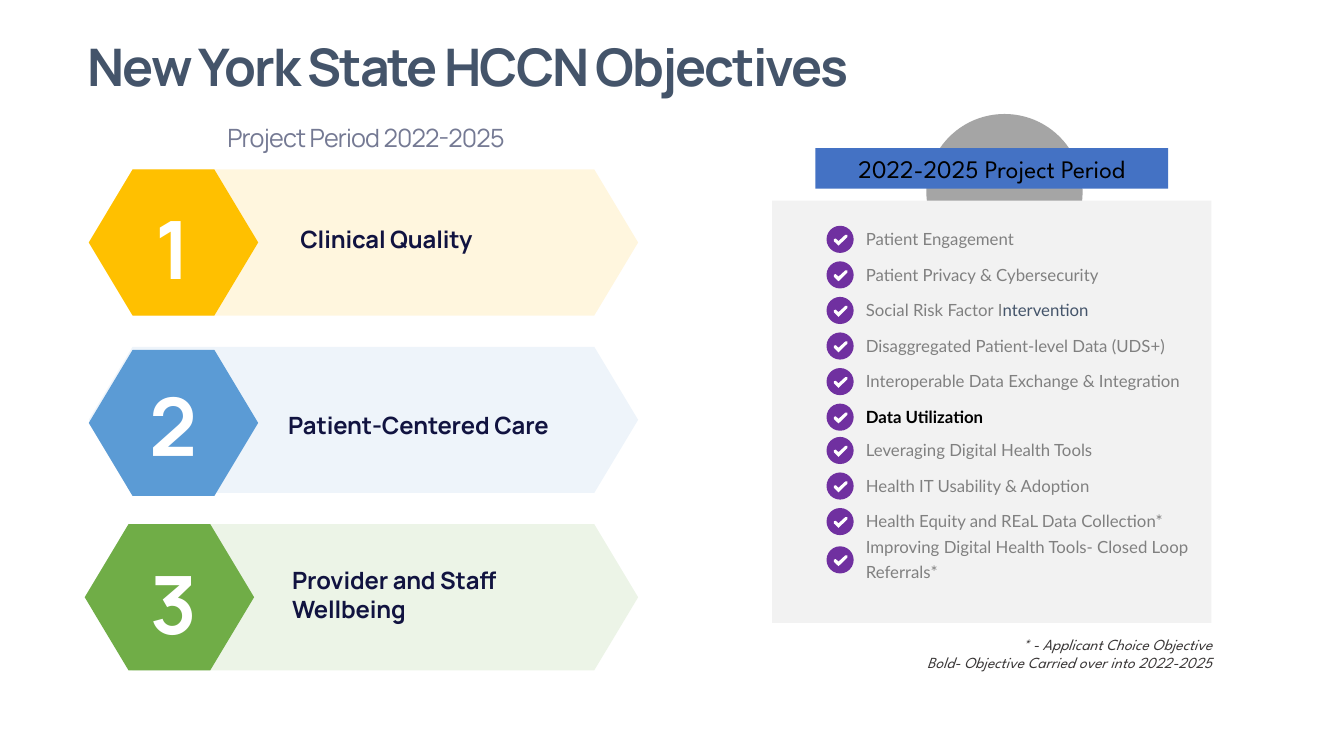
from dataclasses import dataclass, field

from lxml import etree
from pptx import Presentation
from pptx import util as u
from pptx.dml.color import RGBColor
from pptx.enum import shapes, text
from pptx.oxml.ns import qn


@dataclass(frozen=True)
class TextStyle:
    name: str
    size: float
    color: str
    tracking: float = 0
    bold: bool = False
    italic: bool = False


@dataclass(frozen=True)
class Theme:
    title = TextStyle("Manrope", 37, "44546A", -1.4, bold=True)
    subtitle = TextStyle("Manrope", 18, "747993", -0.6)
    number = TextStyle("Manrope", 57.5, "FFFFFF", -1.4, bold=True)
    label = TextStyle("Manrope", 17, "111340", -0.1, bold=True)
    banner = TextStyle("League Spartan", 18, "000000")
    note = TextStyle("League Spartan", 11, "3B3838", italic=True)
    item = TextStyle("Lato", 12, "808080")
    item_accent = TextStyle("Lato", 12, "44546A")
    item_bold = TextStyle("Lato", 12, "000000", bold=True)
    circle: str = "A5A5A5"
    card: str = "F2F2F2"
    banner_fill: str = "4472C4"
    badge: str = "7030A0"
    check: str = "FFFFFF"


@dataclass(frozen=True)
class Goal:
    label: str
    color: str
    opacity: int
    label_box: tuple  # relative to the goal's bar
    token_shift: tuple = field(default=(0, 0))


THEME = Theme()
GOALS = [
    Goal("Clinical Quality", "FFC000", 13, (144, 35.3, 226.8, 28.1)),
    Goal("Patient-Centered Care", "5B9BD5", 10, (135.4, 41.8, 226.8, 28.1), (0, 2.2)),
    Goal("Provider and Staff Wellbeing", "70AD47", 13, (138.2, 25.9, 226.8, 48.2), (-2.9, 0)),
]
# Each objective: space before, number of lines, runs
ROW_GAP, LINE = 7.9, 17.5
OBJECTIVES = [
    (0, 1, [("Patient Engagement", THEME.item)]),
    (ROW_GAP, 1, [("Patient Privacy & Cybersecurity", THEME.item)]),
    (ROW_GAP, 1, [("Social Risk Factor I", THEME.item), ("ntervention", THEME.item_accent)]),
    (ROW_GAP, 1, [("Disaggregated Patient-level Data (UDS+)", THEME.item)]),
    (ROW_GAP, 1, [("Interoperable Data Exchange & Integration", THEME.item)]),
    (ROW_GAP, 1, [("Data Utilization", THEME.item_bold)]),
    (6.3, 1, [("Leveraging Digital Health Tools", THEME.item)]),
    (ROW_GAP, 1, [("Health IT Usability & Adoption", THEME.item)]),
    (ROW_GAP, 1, [("Health Equity and REaL Data Collection*", THEME.item)]),
    (1.1, 2, [("Improving Digital Health Tools- Closed Loop Referrals*", THEME.item)]),
]
CHECK = [(8.6, 14.2), (5.2, 10.9), (5.2, 9.5), (6.6, 9.1), (8.6, 10.9),
         (13.5, 6.4), (14.9, 6.4), (14.9, 8)]


def apply(target, values):
    for name, value in values.items():
        setattr(target, name, value)


def offset(box, left, top, width, height):
    return box[0] + left, box[1] + top, width, height


def points(box):
    return [u.Pt(value) for value in box]


def paint(shape, color, opacity=100):
    shape.shadow.inherit = False
    shape.fill.solid()
    shape.fill.fore_color.rgb = RGBColor.from_string(color)
    shape.line.fill.background()
    if opacity < 100:
        color_node = shape.element.spPr.find(".//" + qn("a:srgbClr"))
        etree.SubElement(color_node, qn("a:alpha")).set("val", str(opacity * 1000))
    return shape


def add_shape(parent, kind, box, color, opacity=100):
    return paint(parent.shapes.add_shape(kind, *points(box)), color, opacity)


def add_run(paragraph, words, style):
    run = paragraph.add_run()
    run.text = words
    apply(run.font, {"name": style.name, "size": u.Pt(style.size),
                     "bold": style.bold, "italic": style.italic})
    run.font.color.rgb = RGBColor.from_string(style.color)
    if style.tracking:
        run.font._element.set("spc", str(round(style.tracking * 100)))


def write(shape, lines, style, alignment=text.PP_ALIGN.LEFT, anchor=text.MSO_ANCHOR.TOP):
    frame = shape.text_frame
    apply(frame, {"word_wrap": True, "auto_size": text.MSO_AUTO_SIZE.NONE,
                  "vertical_anchor": anchor})
    for index, words in enumerate(lines):
        paragraph = frame.add_paragraph() if index else frame.paragraphs[0]
        paragraph.alignment = alignment
        add_run(paragraph, words, style)


def add_text(slide, box, *content, **layout):
    write(slide.shapes.add_textbox(*points(box)), *content, **layout)


def place(shape, box):
    apply(shape, dict(zip(("left", "top", "width", "height"), points(box))))


def add_title(slide, box):
    place(slide.shapes.title, box)
    write(slide.shapes.title, ["New York State HCCN Objectives"], THEME.title)


def add_goals(slide, box):
    # Heading over the three bars
    add_text(slide, offset(box, 31, -36.8, 334, 28.8), ["Project Period 2022-2025"],
             THEME.subtitle, alignment=text.PP_ALIGN.CENTER)
    hexagon = shapes.MSO_SHAPE.HEXAGON
    bar_height = 104.4
    pitch = (box[3] - bar_height) / (len(GOALS) - 1)
    for index, goal in enumerate(GOALS):
        bar = offset(box, 0, index * pitch, box[2], bar_height)
        token = offset(bar, *goal.token_shift, 121, bar_height)
        for outline, opacity in ((bar, goal.opacity), (token, 100)):
            shape = add_shape(slide, hexagon, outline, goal.color, opacity)
            shape.adjustments[0] = 0.3
        add_text(slide, offset(bar, 17.3, 17, 86.4, 77), [str(index + 1)], THEME.number,
                 alignment=text.PP_ALIGN.CENTER, anchor=text.MSO_ANCHOR.MIDDLE)
        add_text(slide, offset(bar, *goal.label_box), [goal.label], THEME.label,
                 anchor=text.MSO_ANCHOR.BOTTOM)


def add_badge(slide, left, top):
    group = slide.shapes.add_group_shape()
    add_shape(group, shapes.MSO_SHAPE.OVAL, (left, top, 19.4, 19.4), THEME.badge)
    outline = [(u.Pt(left + x), u.Pt(top + y)) for x, y in CHECK]
    builder = group.shapes.build_freeform(*outline[0], scale=1.0)
    builder.add_line_segments(outline[1:], close=True)
    paint(builder.convert_to_shape(), THEME.check)


def add_objectives(slide, box):
    # Clipboard: clip, card and banner
    add_shape(slide, shapes.MSO_SHAPE.OVAL, offset(box, 110.2, -61.9, 111.6, 111.6), THEME.circle)
    card = add_shape(slide, shapes.MSO_SHAPE.RECTANGLE, box, THEME.card)
    banner = add_shape(slide, shapes.MSO_SHAPE.RECTANGLE,
                       offset(box, 31, -37.4, 252, 28.8), THEME.banner_fill)
    write(banner, ["2022-2025 Project Period"], THEME.banner, alignment=text.PP_ALIGN.CENTER)

    # Objective list, in front of the card, with one badge per item
    body = slide.placeholders[1]
    place(body, offset(box, 63.4, 15.5, 257.8, 270))
    card.element.addnext(body.element)
    frame = body.text_frame
    apply(frame, {"word_wrap": True, "auto_size": text.MSO_AUTO_SIZE.NONE,
                  "vertical_anchor": text.MSO_ANCHOR.TOP,
                  "margin_left": u.Pt(3.6), "margin_right": u.Pt(3.6),
                  "margin_top": u.Pt(1.44), "margin_bottom": u.Pt(1.44)})
    row_top = 18
    for index, (gap, line_count, runs) in enumerate(OBJECTIVES):
        paragraph = frame.add_paragraph() if index else frame.paragraphs[0]
        properties = paragraph._p.get_or_add_pPr()
        apply_indent = {"marL": "0", "indent": "0"}
        for name, value in apply_indent.items():
            properties.set(name, value)
        etree.SubElement(properties, qn("a:buNone"))
        apply(paragraph, {"alignment": text.PP_ALIGN.LEFT, "line_spacing": u.Pt(LINE),
                          "space_before": u.Pt(gap), "space_after": u.Pt(0)})
        for words, style in runs:
            add_run(paragraph, words, style)
        row_top += gap
        add_badge(slide, box[0] + 38.9, box[1] + row_top + (line_count - 1) * LINE / 2)
        row_top += line_count * LINE

    # Key to the marks
    add_text(slide, offset(box, -24.5, 306.7, 346.3, 33.8),
             ["* - Applicant Choice Objective", "Bold- Objective Carried over into 2022-2025"],
             THEME.note, alignment=text.PP_ALIGN.RIGHT)


def main():
    presentation = Presentation()
    apply(presentation, {"slide_width": u.Pt(960), "slide_height": u.Pt(540)})
    slide = presentation.slides.add_slide(presentation.slide_layouts[1])
    add_title(slide, (55.4, 20.9, 592.6, 51.8))
    add_goals(slide, (63.4, 121, 392.4, 357.8))
    add_objectives(slide, (551.5, 143.3, 313.9, 301.7))
    presentation.save("out.pptx")


if __name__ == "__main__":
    main()
